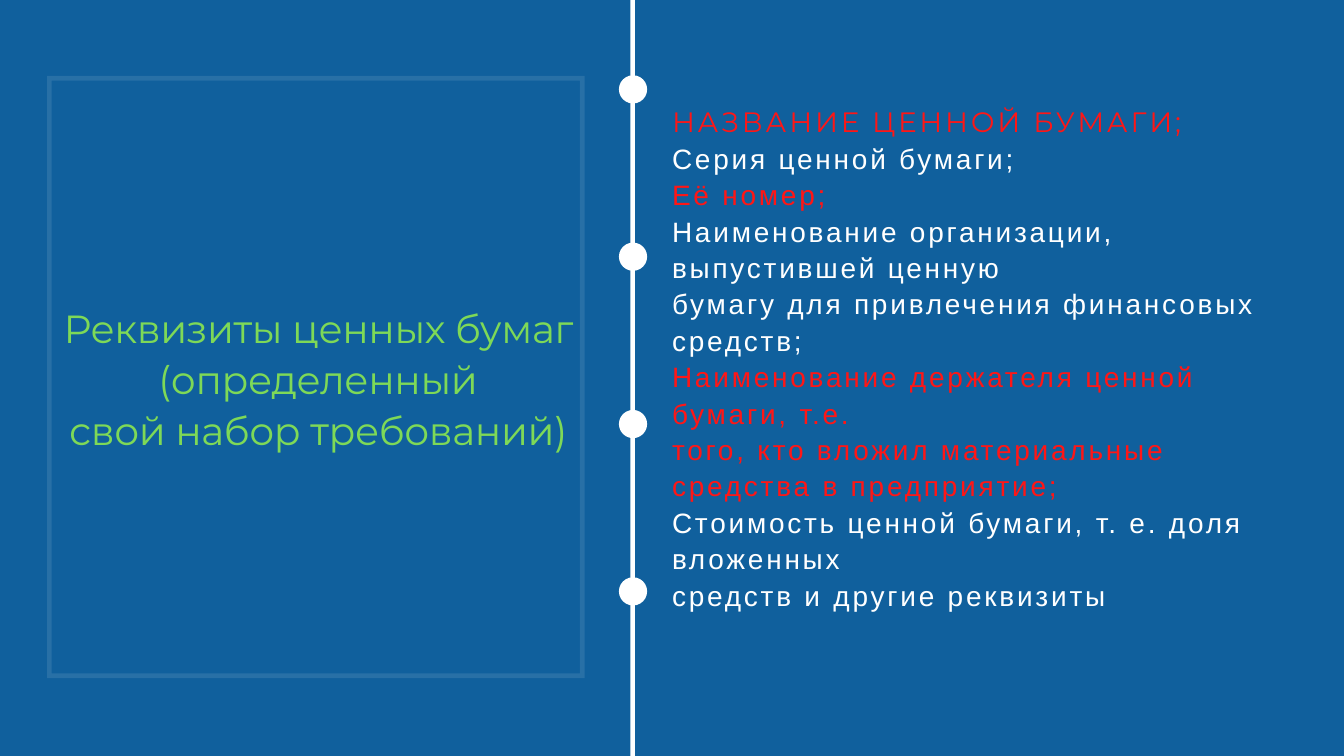
from lxml import etree
from pptx import Presentation
from pptx.dml.color import RGBColor
from pptx.enum.shapes import MSO_SHAPE
from pptx.enum.text import MSO_AUTO_SIZE, PP_ALIGN
from pptx.oxml.ns import qn
from pptx.util import Inches, Pt

RECT, OVAL, FRAME = MSO_SHAPE.RECTANGLE, MSO_SHAPE.OVAL, MSO_SHAPE.FRAME
LEFT, CENTER, FULL = PP_ALIGN.LEFT, PP_ALIGN.CENTER, PP_ALIGN.JUSTIFY
GROW = MSO_AUTO_SIZE.SHAPE_TO_FIT_TEXT
COLS, ROWS = 20, 11.25
HEX = {"blue": "10609D", "white": "FFFFFF", "green": "7ED957", "red": "FF1616"}

TITLE = ["Реквизиты ценных бумаг (определенный", "свой набор требований)"]
ITEMS = [
    ("НАЗВАНИЕ ЦЕННОЙ БУМАГИ;", "red", FULL, "Montserrat"),
    ("Серия ценной бумаги;", "white", FULL, "Arial"),
    ("Её номер;", "red", FULL, "Arial"),
    ("Наименование организации, выпустившей ценную", "white", LEFT, "Arial"),
    ("бумагу для привлечения финансовых средств;", "white", LEFT, "Arial"),
    ("Наименование держателя ценной бумаги, т.е.", "red", LEFT, "Arial"),
    ("того, кто вложил материальные средства в предприятие;", "red", LEFT, "Arial"),
    ("Стоимость ценной бумаги, т. е. доля вложенных", "white", LEFT, "Arial"),
    ("средств и другие реквизиты", "white", LEFT, "Arial"),
]


def color(name):
    return RGBColor.from_string(HEX[name])


def write(para, text, *, size, ink, font="Arial", align=LEFT, track=0):
    para.alignment = align
    para.line_spacing = Pt(size * 1.3)
    run = para.add_run()
    run.text = text
    run.font.size = Pt(size)
    run.font.name = font
    run.font.color.rgb = color(ink)
    run.font._element.set("spc", str(round(track * 100)))


class Deck:
    """Holds the grid, the colours and the current slide."""

    def __init__(self):
        self.show = Presentation()
        self.show.slide_width = Inches(COLS)
        self.show.slide_height = Inches(ROWS)
        self.slide = self.show.slides.add_slide(self.show.slide_layouts[6])

    def area(self, col, row, wide, high):
        across = self.show.slide_width / COLS
        down = self.show.slide_height / ROWS
        return [round(n) for n in (col * across, row * down, wide * across, high * down)]

    def ground(self, ink):
        fill = self.slide.background.fill
        fill.solid()
        fill.fore_color.rgb = color(ink)

    def shape(self, kind, *box, ink="white"):
        shape = self.slide.shapes.add_shape(kind, *self.area(*box))
        shape.shadow.inherit = False
        shape.fill.solid()
        shape.fill.fore_color.rgb = color(ink)
        shape.line.fill.background()
        return shape

    def frame(self, *box, edge, alpha):
        shape = self.shape(FRAME, *box)
        shape.adjustments[0] = edge / min(box[2:])
        tint = shape._element.spPr.find(".//" + qn("a:srgbClr"))
        etree.SubElement(tint, qn("a:alpha")).set("val", str(alpha * 1000))

    def text(self, *box, lines):
        frame = self.slide.shapes.add_textbox(*self.area(*box)).text_frame
        frame.word_wrap = True
        frame.auto_size = GROW
        frame.margin_left = frame.margin_right = 0
        frame.margin_top = frame.margin_bottom = 0
        for i, (line, look) in enumerate(lines):
            para = frame.add_paragraph() if i else frame.paragraphs[0]
            write(para, line, **look)


def main():
    deck = Deck()
    deck.ground("blue")
    deck.frame(0.7, 1.13, 8, 8.96, edge=0.07, alpha=10)
    head = dict(size=42, ink="green", font="Montserrat", align=CENTER, track=-0.4)
    deck.text(0.9, 4.47, 7.67, 2.23, lines=[(line, head) for line in TITLE])
    deck.shape(RECT, 9.38, -0.18, 0.07, 11.72)
    for i in range(4):
        deck.shape(OVAL, 9.21, 1.12 + 2.49 * i, 0.42, 0.42)
    deck.text(10, 1.52, 9.39, 8.11, lines=[
        (line, dict(size=30, ink=ink, font=font, align=align, track=3))
        for line, ink, align, font in ITEMS
    ])
    deck.show.save("out.pptx")


if __name__ == "__main__":
    main()
